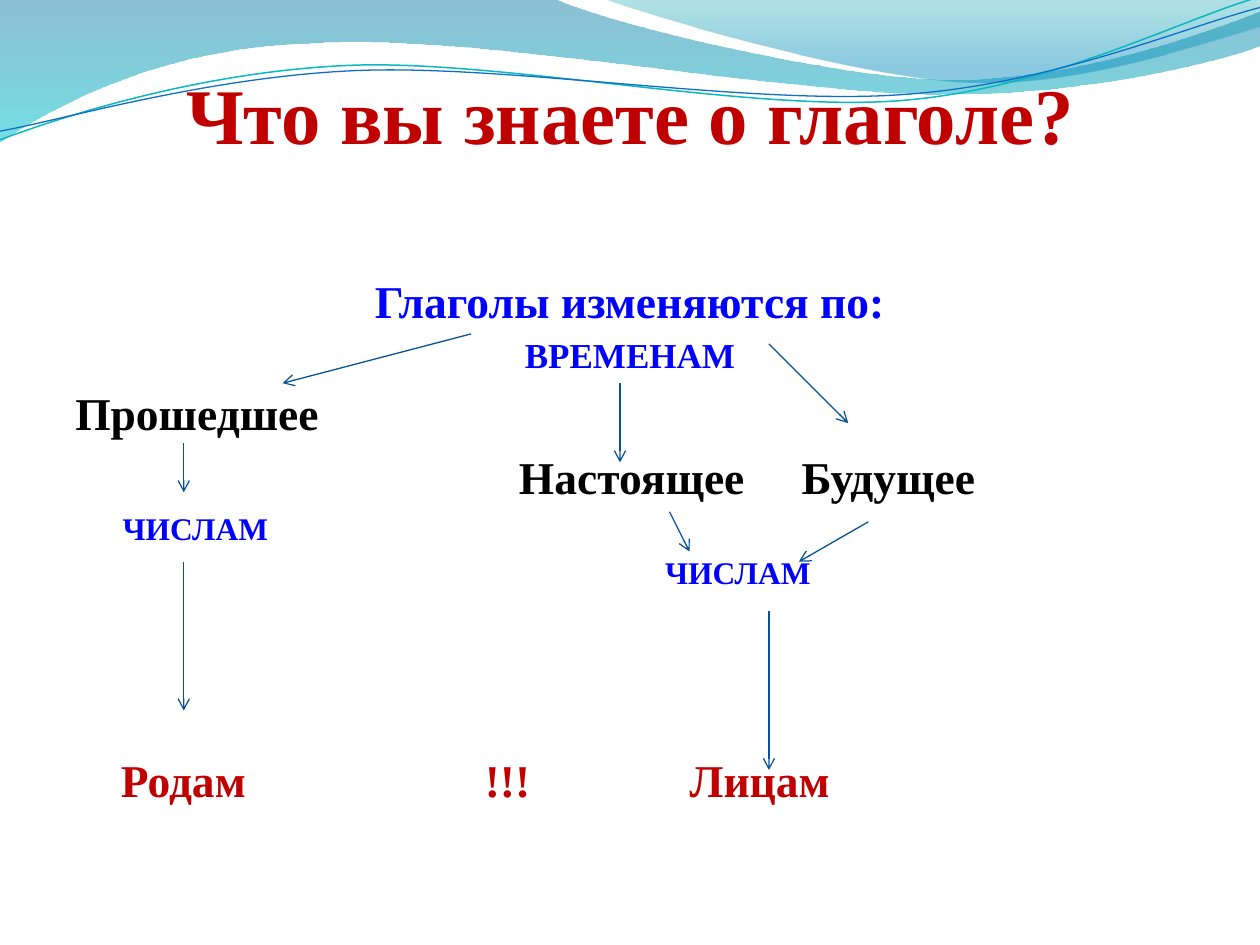
from lxml import etree
from pptx import Presentation
from pptx import util as u
from pptx.dml.color import RGBColor
from pptx.enum import shapes, text
from pptx.oxml.ns import qn

Pt = u.Pt
FONT = "Times New Roman"
RED = RGBColor(0xC0, 0x00, 0x00)
BLUE = RGBColor(0x00, 0x00, 0xFF)
BLACK = RGBColor(0x00, 0x00, 0x00)
WHITE = RGBColor(0xFF, 0xFF, 0xFF)
ARROW = RGBColor(0x09, 0x52, 0x95)
TEAL = RGBColor(0x0A, 0xB8, 0xBF)
SKY = RGBColor(0x0F, 0x6F, 0xC6)

TITLE = "Что вы знаете о глаголе?"

# size, colour, space before, words with their tab positions (None: no tab), centred
LINES = [
    (26, BLUE, 0, [(None, "Глаголы изменяются по:")], True),
    (20, BLUE, 3.5, [(None, "ВРЕМЕНАМ")], True),
    (26, BLACK, 5.5, [(None, "Прошедшее")], False),
    (26, BLACK, 5, [(253.5, "Настоящее"), (415, "Будущее")], False),
    (18, BLUE, 3.5, [(27, "ЧИСЛАМ")], False),
    (18, BLUE, 3.5, [(337, "ЧИСЛАМ")], False),
    (26, RED, 92, [(26, "Родам"), (234, "!!!"), (351, "Лицам")], False),
]

# from x, from y, to x, to y
ARROWS = [
    (269.2, 190.8, 161.5, 219),
    (354.3, 219, 354.3, 264.2),
    (439.4, 196.5, 484.7, 241.8),
    (105, 253, 105, 281.3),
    (105, 321, 105, 406),
    (382.6, 292.5, 394, 315.2),
    (496.2, 298.2, 456.5, 321),
    (439.4, 349.2, 439.4, 440),
]

# A step of 2 numbers is a straight line, of 6 numbers a Bezier curve.
# Gradient stops: position, colour, opacity in percent
BANDS = [
    ([(0, 0), (316.8, -0.7), (342.7, 12.2, 478.1, 45.4, 545.8, 45.4),
      (614.2, 45.4, 689.8, 18.7, 720, 6.5), (720.7, 25.9),
      (707.8, 31.7, 626.4, 54.7, 537.1, 54), (447.8, 54, 275, 20.2, 185, 24.5),
      (92.9, 25.9, 33.1, 59.8, -0.7, 81.4)],
     [(0, RGBColor(0x00, 0x74, 0xA1), 45), (1, RGBColor(0x00, 0xC6, 0xCF), 55)]),
    ([(344.9, -0.7), (366.5, 7.9, 491, 44.6, 553.7, 46.8),
      (616.3, 49.7, 691.9, 23, 720, 15.1), (720, 0)],
     [(0, RGBColor(0x00, 0xA1, 0xA9), 30), (0.8, RGBColor(0x00, 0x8B, 0xBF), 45)]),
]
STRANDS = [
    ([(0, 79.9), (34.6, 67, 113.8, 41, 199.4, 37.4),
      (284.4, 33.8, 427, 64.1, 513.4, 57.6),
      (599.8, 51.1, 675.4, 10.8, 718.6, -1.4)], TEAL, 0.85),
    ([(0, 74.9), (33.8, 69.1, 118.1, 43.9, 203.8, 40.3),
      (290.2, 36.7, 429.8, 60.5, 516.2, 54),
      (601.9, 48.2, 677.5, 15.1, 720, 4.3)], SKY, 0.75),
]


def add_outline(slide, steps, close):
    """Build a freeform through the step ends, then bend its curved segments."""
    ends = [(Pt(step[-2]), Pt(step[-1])) for step in steps]
    builder = slide.shapes.build_freeform(*ends[0])
    builder.add_line_segments(ends[1:], close=close)
    shape = builder.convert_to_shape()
    shape.shadow.inherit = False
    segments = list(shape._element.iter(qn("a:lnTo")))
    for segment, step in zip(segments, steps[1:]):
        if len(step) == 6:
            segment.tag = qn("a:cubicBezTo")
            controls = [etree.Element(qn("a:pt"), x=str(Pt(step[i]) - shape.left),
                                      y=str(Pt(step[i + 1]) - shape.top))
                        for i in (0, 2)]
            segment[:0] = controls
    return shape


def add_band(slide, steps, stops):
    shape = add_outline(slide, steps, True)
    shape.line.fill.background()
    shape.fill.gradient()
    shape.fill.gradient_angle = 270
    for stop, (position, colour, _) in zip(shape.fill.gradient_stops, stops):
        stop.position = position
        stop.color.rgb = colour
    colours = shape._element.spPr.iter(qn("a:srgbClr"))
    for element, (_, _, opacity) in zip(list(colours), stops):
        etree.SubElement(element, qn("a:alpha"), val=str(opacity * 1000))


def add_strand(slide, steps, colour, width):
    shape = add_outline(slide, steps, False)
    shape.fill.background()
    shape.line.color.rgb = colour
    shape.line.width = Pt(width)


def add_arrow(slide, ends):
    arrow = slide.shapes.add_connector(shapes.MSO_CONNECTOR.STRAIGHT,
                                       *[Pt(value) for value in ends])
    arrow.line.color.rgb = ARROW
    arrow.line.width = Pt(0.75)
    properties = arrow._element.spPr
    etree.SubElement(properties.find(qn("a:ln")), qn("a:tailEnd"), type="arrow")
    etree.SubElement(properties, qn("a:effectLst"))


def add_run(paragraph, words, size, colour):
    run = paragraph.add_run()
    run.text = words
    run.font.name = FONT
    run.font.size = Pt(size)
    run.font.bold = True
    run.font.color.rgb = colour


def set_margins(frame, left, top, right, bottom):
    frame.margin_left, frame.margin_top = Pt(left), Pt(top)
    frame.margin_right, frame.margin_bottom = Pt(right), Pt(bottom)
    frame.word_wrap = True


def add_title(slide):
    title = slide.shapes.title
    title.left, title.top, title.width, title.height = Pt(36), Pt(35.7), Pt(648), Pt(56)
    frame = title.text_frame
    set_margins(frame, 0, 3.6, 0, 0)
    frame.vertical_anchor = text.MSO_ANCHOR.BOTTOM
    paragraph = frame.paragraphs[0]
    paragraph.alignment = text.PP_ALIGN.CENTER
    add_run(paragraph, TITLE, 45, RED)
    slide.shapes._spTree.append(title._element)  # in front of the waves


def add_body(slide):
    frame = slide.shapes.add_textbox(Pt(36), Pt(152.6), Pt(648), Pt(345.6)).text_frame
    set_margins(frame, 7.2, 3.6, 7.2, 3.6)
    for index, (size, colour, before, words, centred) in enumerate(LINES):
        paragraph = frame.add_paragraph() if index else frame.paragraphs[0]
        paragraph.alignment = text.PP_ALIGN.CENTER if centred else text.PP_ALIGN.LEFT
        paragraph.space_before = Pt(before)
        tabs = [tab for tab, _ in words if tab]
        if tabs:
            tab_list = etree.SubElement(paragraph._p.get_or_add_pPr(), qn("a:tabLst"))
            for tab in tabs:
                etree.SubElement(tab_list, qn("a:tab"), pos=str(Pt(tab)), algn="l")
        for tab, word in words:
            add_run(paragraph, "\t" + word if tab else word, size, colour)


def main():
    presentation = Presentation()
    presentation.slide_width, presentation.slide_height = Pt(720), Pt(540)
    slide = presentation.slides.add_slide(presentation.slide_layouts[5])
    slide.background.fill.solid()
    slide.background.fill.fore_color.rgb = WHITE
    for band in BANDS:
        add_band(slide, *band)
    for strand in STRANDS:
        add_strand(slide, *strand)
    add_title(slide)
    add_body(slide)
    for ends in ARROWS:
        add_arrow(slide, ends)
    presentation.save("out.pptx")


if __name__ == "__main__":
    main()
